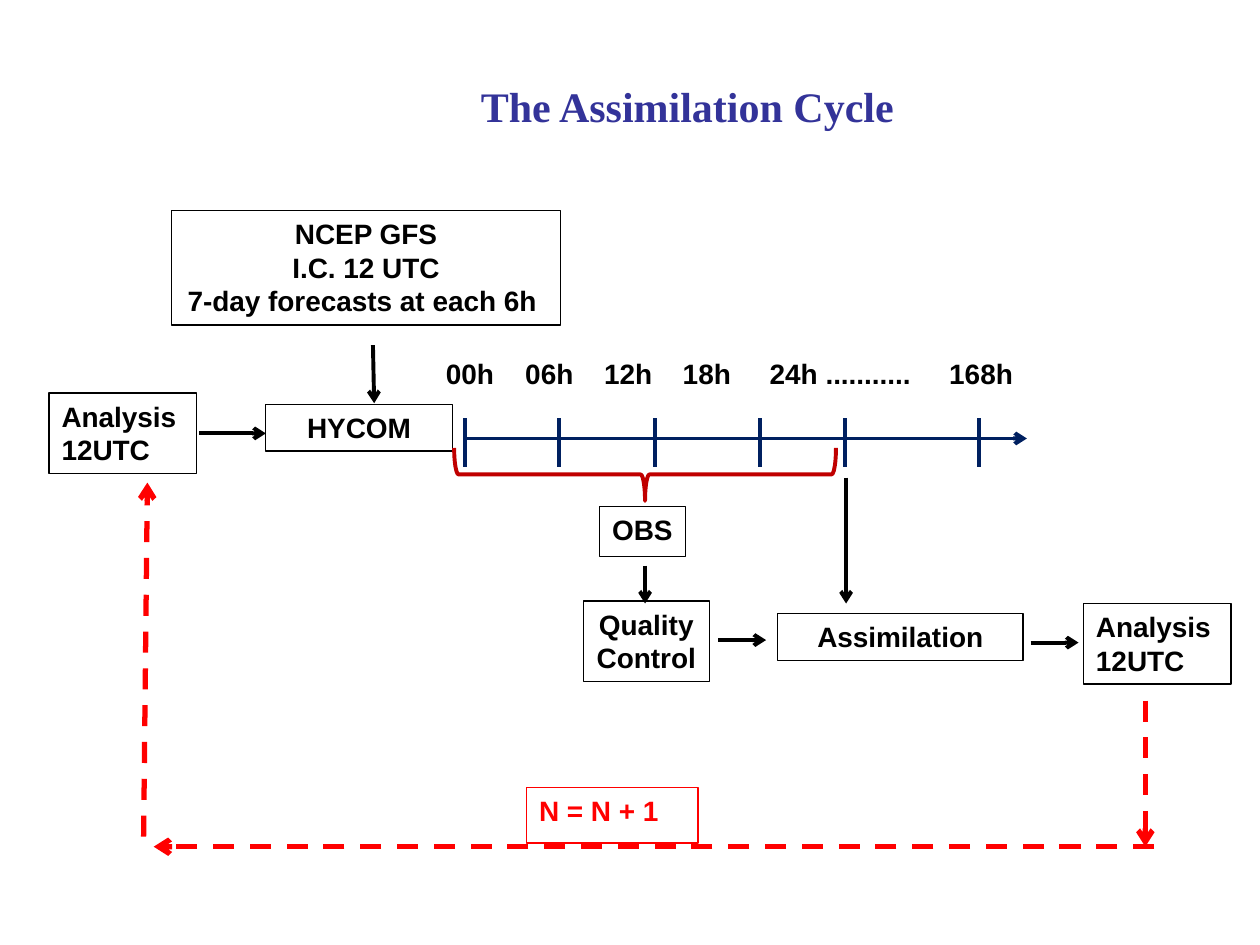
from collections import namedtuple

from lxml import etree
from pptx import Presentation
from pptx.dml.color import RGBColor
from pptx.enum.dml import MSO_LINE
from pptx.enum.shapes import MSO_CONNECTOR, MSO_SHAPE
from pptx.enum.text import MSO_ANCHOR, MSO_AUTO_SIZE, PP_ALIGN
from pptx.oxml.ns import qn
from pptx.util import Inches, Pt

LEFT, CENTER = PP_ALIGN.LEFT, PP_ALIGN.CENTER
TOP, FIT = MSO_ANCHOR.TOP, MSO_AUTO_SIZE.SHAPE_TO_FIT_TEXT
STRAIGHT, DASH = MSO_CONNECTOR.STRAIGHT, MSO_LINE.DASH
RECT, BRACE = MSO_SHAPE.RECTANGLE, MSO_SHAPE.LEFT_BRACE

CELL = 0.1  # the slide is a grid of 100 columns by 75 rows
COLS, ROWS = 100, 75

Box = namedtuple("Box", "x y w h")
Theme = namedtuple("Theme", "title ink axis brace loop heading_font body_font "
                            "heading body border stroke loop_stroke")
THEME = Theme(title="333399", ink="000000", axis="002060", brace="C00000",
              loop="FF0000", heading_font="Times New Roman", body_font="Arial",
              heading=24, body=16, border=0.75, stroke=2.25, loop_stroke=3)


def cells(n):
    return Inches(n * CELL)


def inside(box, x, y, w, h):
    return Box(box.x + x, box.y + y, w, h)


def write(shape, lines, color=THEME.ink, align=CENTER, wrap=True,
          font=THEME.body_font, size=THEME.body):
    tf = shape.text_frame
    for name, value in {"word_wrap": wrap, "auto_size": FIT,
                        "vertical_anchor": TOP}.items():
        setattr(tf, name, value)
    for i, line in enumerate(lines):
        p = tf.add_paragraph() if i else tf.paragraphs[0]
        p.alignment = align
        r = p.add_run()
        r.text = line
        for name, value in {"name": font, "size": Pt(size), "bold": True}.items():
            setattr(r.font, name, value)
        r.font.color.rgb = RGBColor.from_string(color)
    return tf


def outline(s, kind, box, color, width):
    sp = s.shapes.add_shape(kind, *map(cells, box))
    sp.shadow.inherit = False
    sp.fill.background()
    sp.line.color.rgb = RGBColor.from_string(color)
    sp.line.width = Pt(width)
    return sp


def node(s, box, lines, color=THEME.ink, **text):
    write(outline(s, RECT, box, color, THEME.border), lines, color, **text)


def line(s, box, start, end, color=THEME.ink, width=THEME.stroke,
         dash=None, arrow=True):
    """Draw from start to end, both counted in cells from the box corner."""
    points = [cells(n) for x, y in (start, end) for n in (box.x + x, box.y + y)]
    c = s.shapes.add_connector(STRAIGHT, *points)
    c.line.color.rgb = RGBColor.from_string(color)
    c.line.width = Pt(width)
    if dash:
        c.line.dash_style = dash
    if arrow:
        etree.SubElement(c.line._get_or_add_ln(), qn("a:tailEnd"), type="arrow")
    etree.SubElement(c._element.spPr, qn("a:effectLst"))


def title(s, box):
    tb = s.shapes.add_textbox(*map(cells, box))
    tf = write(tb, ["The Assimilation Cycle"], THEME.title,
               font=THEME.heading_font, size=THEME.heading)
    tf.margin_left = cells(5.9)


def analysis(s, box):
    node(s, box, ["Analysis", "12UTC"], align=LEFT)


def model_inputs(s, box):
    """Initial analysis and atmospheric forcing, both feeding the ocean model."""
    node(s, inside(box, 9.7, 0, 30.9, 9.1),
         ["NCEP GFS", "I.C. 12 UTC", "7-day forecasts at each 6h "])
    node(s, inside(box, 17.2, 15.4, 14.8, 3.7), ["HYCOM"])
    analysis(s, inside(box, 0, 14.5, 11.7, 6.4))
    line(s, box, (11.9, 17.7), (17.2, 17.7))
    line(s, box, (25.7, 10.7), (25.8, 15.3))


def timeline(s, box):
    ticks = (2.5, 10, 17.6, 25.9, 32.7, 43.3)
    line(s, box, (ticks[0], 7), (47.1, 7), THEME.axis)
    for x in ticks:
        line(s, box, (x, 5.4), (x, 9.3), THEME.axis, arrow=False)

    labels = s.shapes.add_textbox(*map(cells, inside(box, 0, 0, 47.9, 3.7)))
    stops = etree.SubElement(labels.text_frame.paragraphs[0]._p.get_or_add_pPr(),
                             qn("a:tabLst"))
    for x in (6.3, 12.55, 18.8, 25.7, 39.95):
        etree.SubElement(stops, qn("a:tab"), pos=str(cells(x)), algn="l")
    write(labels, ["00h\t06h\t12h\t18h\t24h ...........\t168h"], align=LEFT, wrap=False)

    window = outline(s, BRACE, inside(box, 14.7, -5.3, 4.2, 30.3),
                     THEME.brace, THEME.stroke)
    window.rotation = 270


def assimilation(s, box):
    """Observations and the 24h forecast, leading to the next analysis."""
    node(s, inside(box, 1.3, 2.3, 6.8, 4), ["OBS"], align=LEFT, wrap=False)
    node(s, inside(box, 0, 9.8, 10, 6.4), ["Quality", "Control"], wrap=False)
    node(s, inside(box, 15.4, 10.8, 19.5, 3.7), ["Assimilation"])
    analysis(s, inside(box, 39.7, 10, 11.7, 6.4))
    for start, end in (((4.9, 7), (4.9, 10)), ((20.85, 0), (20.85, 10)),
                       ((10.7, 12.9), (14.5, 12.9)), ((35.5, 13.1), (39.3, 13.1))):
        line(s, box, start, end)


def cycle_loop(s, box):
    for start, end in (((79.5, 17.3), (79.5, 28.9)), ((80.2, 28.9), (0.8, 28.9)),
                       ((0, 28.1), (0.3, 0))):
        line(s, box, start, end, THEME.loop, THEME.loop_stroke, DASH)
    node(s, inside(box, 30.4, 24.2, 13.6, 4.4), ["N = N + 1"], THEME.loop, align=LEFT)


def main():
    prs = Presentation()
    prs.slide_width, prs.slide_height = cells(COLS), cells(ROWS)
    s = prs.slides.add_slide(prs.slide_layouts[6])
    title(s, Box(7.8, 5.9, 88.6, 5))
    model_inputs(s, Box(3.9, 16.7, 40.6, 20.9))
    timeline(s, Box(34.4, 27.8, 47.9, 12.1))
    assimilation(s, Box(46.3, 37.9, 51.4, 16.4))
    cycle_loop(s, Box(11.4, 38.3, 80.2, 28.9))
    prs.save("out.pptx")


if __name__ == "__main__":
    main()
